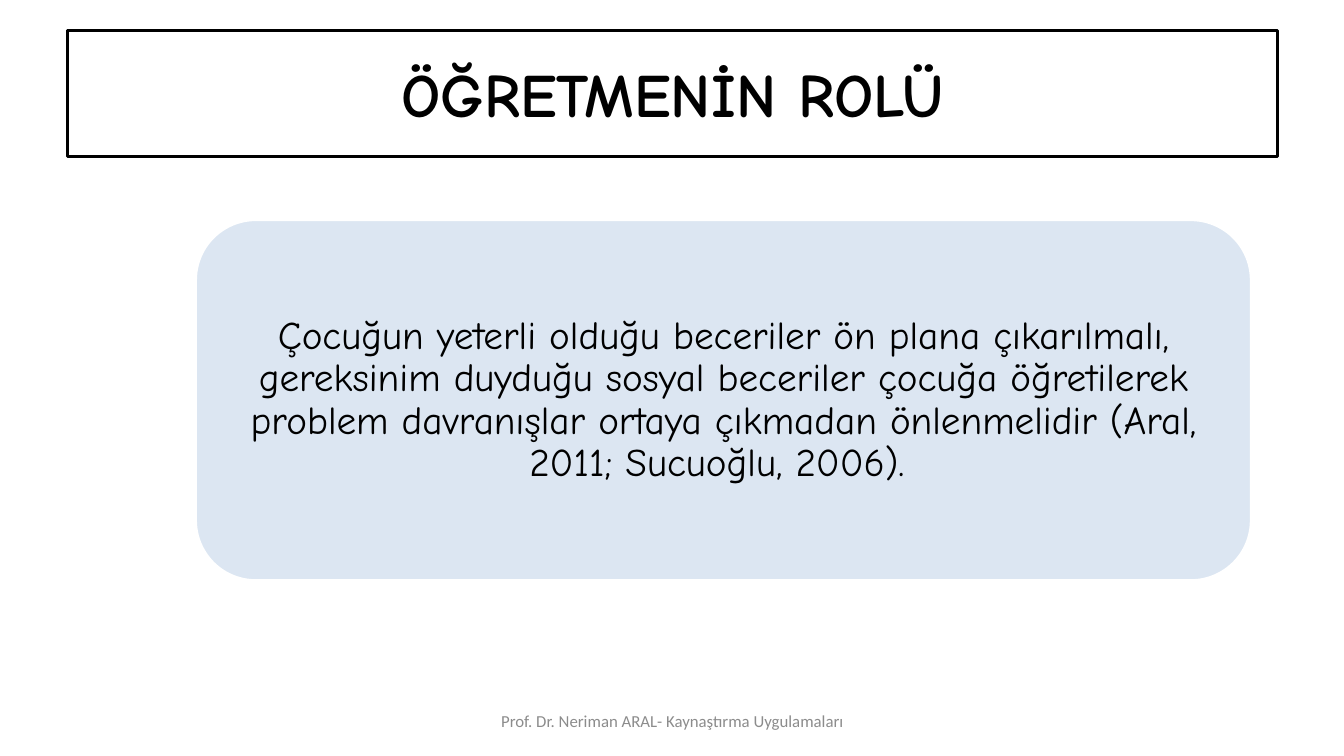
from pptx import Presentation
from pptx.dml.color import RGBColor
from pptx.enum.shapes import MSO_SHAPE as SHAPE
from pptx.enum.text import MSO_ANCHOR as ANCHOR, PP_ALIGN as ALIGN
from pptx.util import Pt

BLACK = RGBColor(0x00, 0x00, 0x00)
WHITE = RGBColor(0xFF, 0xFF, 0xFF)
GREY = RGBColor(0x8C, 0x8C, 0x8C)
PALE_BLUE = RGBColor(0xDC, 0xE6, 0xF2)
EMU_PER_PX = 9144


def px(*lengths):
    return [n * EMU_PER_PX for n in lengths]


class Deck:
    """Builds slides in one style, with lengths in px of 1/100 inch."""

    HAND = "Comic Neue"
    PLAIN = "Calibri"

    def __init__(self, width, height):
        self.prs = Presentation()
        self.prs.slide_width, self.prs.slide_height = px(width, height)
        self.s = None

    def add_slide(self):
        self.s = self.prs.slides.add_slide(self.prs.slide_layouts[5])

    def paint(self, sp, fill, line):
        sp.fill.solid()
        sp.fill.fore_color.rgb = fill
        sp.line.color.rgb = line
        sp.line.width = Pt(2)

    def set_text(self, sp, text, font, size, color, bold=False, inset=(10, 5)):
        tf = sp.text_frame
        tf.word_wrap = True
        tf.vertical_anchor = ANCHOR.MIDDLE
        tf.margin_left, tf.margin_top = tf.margin_right, tf.margin_bottom = px(*inset)
        p = tf.paragraphs[0]
        p.text = text
        p.alignment = ALIGN.CENTER
        p.font.name, p.font.size, p.font.bold = font, Pt(size), bold
        p.font.color.rgb = color
        return p

    def title(self, text, *box):
        sp = self.s.shapes.title
        sp.left, sp.top, sp.width, sp.height = px(*box)
        self.paint(sp, WHITE, BLACK)
        self.set_text(sp, text, self.HAND, 44, BLACK, bold=True)

    def card(self, text, *box):
        sp = self.s.shapes.add_shape(SHAPE.ROUNDED_RECTANGLE, *px(*box))
        sp.shadow.inherit = False
        self.paint(sp, PALE_BLUE, WHITE)
        p = self.set_text(sp, text, self.HAND, 28, BLACK, inset=(12, 6))
        p.line_spacing = 0.9

    def footer(self, text, *box):
        sp = self.s.shapes.add_textbox(*px(*box))
        self.set_text(sp, text, self.PLAIN, 12, GREY)


def main():
    deck = Deck(1333, 750)
    deck.add_slide()
    deck.title("ÖĞRETMENİN ROLÜ", 67, 30, 1200, 125)
    deck.card(
        "Çocuğun yeterli olduğu beceriler ön plana çıkarılmalı, gereksinim "
        "duyduğu sosyal beceriler çocuğa öğretilerek problem davranışlar ortaya "
        "çıkmadan önlenmelidir (Aral, 2011; Sucuoğlu, 2006). ",
        194, 218, 1047, 358)
    deck.footer("Prof. Dr. Neriman ARAL- Kaynaştırma Uygulamaları", 456, 695, 422, 40)
    deck.prs.save("out.pptx")


if __name__ == "__main__":
    main()
